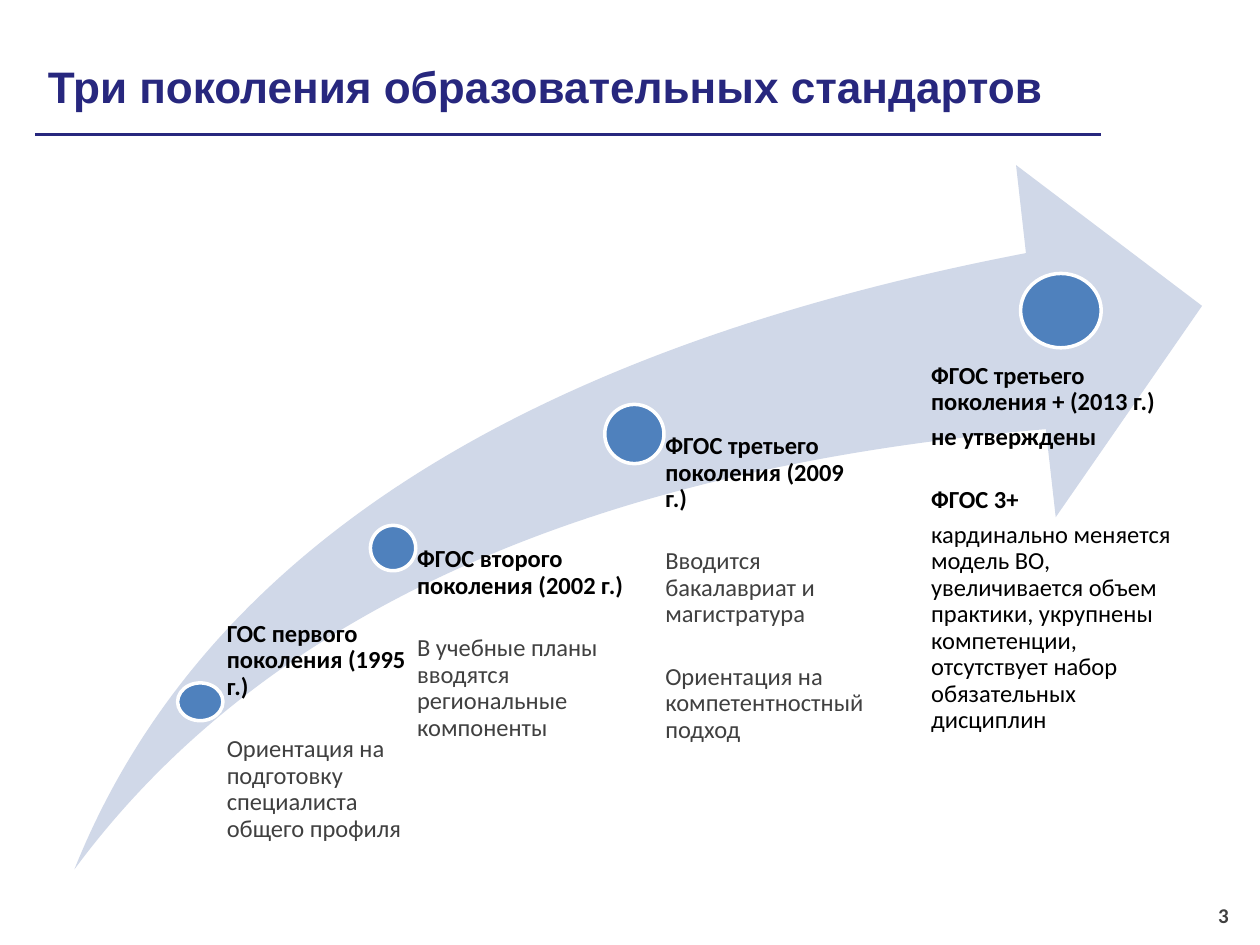
from pptx import Presentation
from pptx.dml.color import RGBColor
from pptx.enum.shapes import MSO_CONNECTOR, MSO_SHAPE
from pptx.enum.text import MSO_ANCHOR, PP_ALIGN
from pptx.oxml.ns import qn
from pptx.util import Inches, Pt
from lxml.etree import SubElement

COLUMNS, ROWS = 100, 75
NAVY, BLUE, PALE, GREY = "27277E", "4F81BD", "D0D8E8", "404040"
BLACK, WHITE = "000000", "FFFFFF"
TIGHT, WIDE = 5, 20.5  # points between paragraphs


def color(hex_code):
    return RGBColor.from_string(hex_code)


def write(paragraph, text, size=14, font="Calibri", ink=BLACK, bold=False,
          align=PP_ALIGN.LEFT, before=0, spacing=1.0):
    paragraph.alignment = align
    paragraph.line_spacing = spacing
    paragraph.space_before = Pt(before)
    run = paragraph.add_run()
    run.text = text
    run.font.size, run.font.name, run.font.bold = Pt(size), font, bold
    run.font.color.rgb = color(ink)


class SlideBuilder:
    """Places elements on a grid of 100 columns by 75 rows."""

    def __init__(self, presentation):
        self.column = presentation.slide_width / COLUMNS
        self.row = presentation.slide_height / ROWS
        self.slide = presentation.slides.add_slide(presentation.slide_layouts[5])
        self.shapes = self.slide.shapes

    def box(self, left, top, width, height):
        return (round(left * self.column), round(top * self.row),
                round(width * self.column), round(height * self.row))

    def title(self, text, *area):
        heading = self.shapes.title
        heading.left, heading.top, heading.width, heading.height = self.box(*area)
        heading.text_frame.vertical_anchor = MSO_ANCHOR.MIDDLE
        write(heading.text_frame.paragraphs[0], text, size=25.2, font="Arial",
              ink=NAVY, bold=True)

    def rule(self, left, top, width):
        x, y, length, _ = self.box(left, top, width, 0)
        rule = self.shapes.add_connector(MSO_CONNECTOR.STRAIGHT, x, y, x + length, y)
        rule.line.color.rgb = color(NAVY)
        rule.line.width = Pt(1.5)
        SubElement(rule._element.spPr, qn("a:effectLst"))

    def shape(self, kind, area, fill, outline=None):
        shape = self.shapes.add_shape(kind, *self.box(*area))
        shape.shadow.inherit = False
        shape.fill.solid()
        shape.fill.fore_color.rgb = color(fill)
        if outline:
            shape.line.color.rgb = color(outline)
            shape.line.width = Pt(2)
        else:
            shape.line.fill.background()
        return shape

    def text(self, area):
        frame = self.shapes.add_textbox(*self.box(*area)).text_frame
        frame.word_wrap = True
        return frame

    def generation(self, marker, area, inset, notes):
        self.shape(MSO_SHAPE.OVAL, marker, BLUE, WHITE)
        frame = self.text(area)
        frame.margin_left = Inches(inset)
        frame.margin_top = frame.margin_right = frame.margin_bottom = 0
        for index, (note, look) in enumerate(notes):
            paragraph = frame.add_paragraph() if index else frame.paragraphs[0]
            write(paragraph, note, spacing=0.9, **look)

    def page_number(self, number, *area):
        frame = self.text(area)
        frame.vertical_anchor = MSO_ANCHOR.MIDDLE
        write(frame.paragraphs[0], number, size=12, ink=GREY, bold=True,
              align=PP_ALIGN.RIGHT)


NAME = {"bold": True}
DETAIL = {"ink": GREY, "before": WIDE}

# Marker area, text area, left inset in inches, paragraphs
GENERATIONS = [
    ((14.1, 54.2, 3.6, 3), (16.9, 49.3, 15.3, 13.3), 0.11, [
        ("ГОС первого поколения (1995 г.)", NAME),
        ("Ориентация на подготовку специалиста общего профиля", DETAIL)]),
    ((29.4, 41.7, 3.6, 3.6), (31.2, 43.4, 18.8, 25.6), 0.19, [
        ("ФГОС второго поколения (2002 г.)", NAME),
        ("В учебные планы вводятся региональные компоненты", DETAIL)]),
    ((48, 32.1, 4.7, 4.7), (50.3, 34.4, 18.8, 34.6), 0.25, [
        ("ФГОС третьего поколения (2009 г.)", NAME),
        ("Вводится бакалавриат и магистратура", DETAIL),
        ("Ориентация на компетентностный подход", DETAIL)]),
    ((81, 21.7, 6.4, 5.9), (70.5, 28.8, 24.3, 40.1), 0.34, [
        ("ФГОС третьего поколения + (2013 г.)", NAME),
        ("не утверждены", {**NAME, "before": TIGHT}),
        ("ФГОС 3+", {**NAME, "before": WIDE}),
        ("кардинально меняется модель ВО, увеличивается объем практики, "
         "укрупнены компетенции, отсутствует набор обязательных дисциплин",
         {"before": TIGHT})]),
]


def main():
    presentation = Presentation()
    presentation.slide_width, presentation.slide_height = Inches(10), Inches(7.5)
    builder = SlideBuilder(presentation)

    # Heading
    builder.rule(2.8, 10.7, 84.6)
    builder.title("Три поколения образовательных стандартов", 2.8, 3, 84.6, 7.7)
    builder.page_number("3", 75.2, 70.6, 23.3, 4)

    # Rising arrow with the generations along it
    arrow = builder.shape(MSO_SHAPE.SWOOSH_ARROW, (5.9, 13.1, 89.5, 55.9), PALE)
    arrow.adjustments[0] = arrow.adjustments[1] = 0.25
    for generation in GENERATIONS:
        builder.generation(*generation)

    presentation.save("out.pptx")


if __name__ == "__main__":
    main()
